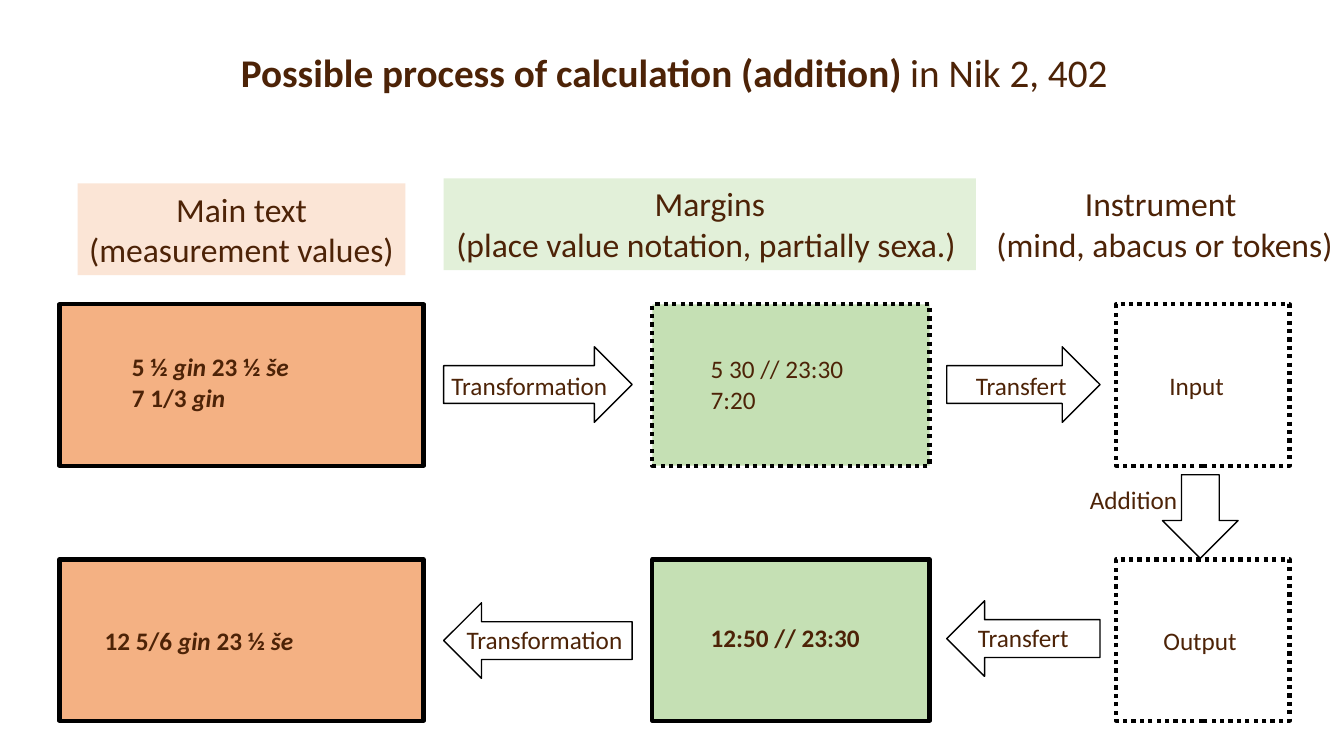
from dataclasses import dataclass

from pptx import Presentation
from pptx.dml.color import RGBColor
from pptx.enum.dml import MSO_LINE
from pptx.enum.shapes import MSO_SHAPE
from pptx.enum.text import MSO_AUTO_SIZE, PP_ALIGN
from pptx.util import Inches, Pt


@dataclass(frozen=True)
class Theme:
    """Colours, font and type sizes of the slide."""
    ink: str = "4D2307"
    edge: str = "000000"
    orange: str = "F4B183"
    peach: str = "FBE5D6"
    green: str = "C5E0B4"
    mint: str = "E2F0D9"
    font: str = "Calibri"
    title: int = 28
    head: int = 24
    body: int = 18


THEME = Theme()
B, I, BI = {"bold": True}, {"italic": True}, {"bold": True, "italic": True}


def apply(target, values):
    """Set each named value on the target."""
    for name, value in values.items():
        setattr(target, name, value)


def paint(shape, color):
    """Fill a shape with a colour, or leave it clear."""
    if color:
        shape.fill.solid()
        shape.fill.fore_color.rgb = RGBColor.from_string(color)
    else:
        shape.fill.background()


def draw(slide, kind, box, width, fill=None, dash=None, turn=0):
    """Draw an outlined preset shape."""
    shape = slide.shapes.add_shape(kind, *map(Inches, box))
    shape.shadow.inherit = False
    shape.rotation = turn
    paint(shape, fill)
    shape.line.color.rgb = RGBColor.from_string(THEME.edge)
    apply(shape.line, {"width": Pt(width), "dash_style": dash})


def write(slide, box, lines, size=THEME.body, align=PP_ALIGN.LEFT,
          fill=None, wrap=False):
    """Write lines of (text, style) runs in a text box."""
    shape = slide.shapes.add_textbox(*map(Inches, box))
    paint(shape, fill)
    frame = shape.text_frame
    apply(frame, {"word_wrap": wrap,
                  "auto_size": MSO_AUTO_SIZE.SHAPE_TO_FIT_TEXT})
    for n, line in enumerate(lines):
        para = frame.add_paragraph() if n else frame.paragraphs[0]
        para.alignment = align
        for text, style in line:
            run = para.add_run()
            run.text = text
            run.font.color.rgb = RGBColor.from_string(THEME.ink)
            apply(run.font, {"name": THEME.font, "size": Pt(size), **style})


def label(slide, left, top, width, text):
    """Write a plain one-line label that wraps."""
    write(slide, (left, top, width, 0.4), [[(text, {})]], wrap=True)


def header(slide, left, top, width, lines, fill=None):
    """Write a centred column heading."""
    write(slide, (left, top, width, 0.91), [[(text, {})] for text in lines],
          THEME.head, PP_ALIGN.CENTER, fill)


def stages(slide):
    """Draw the three stages in both rows."""
    dot = MSO_LINE.ROUND_DOT
    columns = ((0.59, 3.61, THEME.orange, None, None),
               (6.47, 2.75, THEME.green, dot, None),
               (11.07, 1.72, None, dot, dot))
    for left, width, fill, *dashes in columns:
        for top, dash in zip((3.02, 5.55), dashes):
            draw(slide, MSO_SHAPE.RECTANGLE, (left, top, width, 1.6), 3,
                 fill, dash)


def arrows(slide):
    """Draw the arrows that join the stages."""
    for left, top, width, turn in ((4.4, 3.44, 1.87, 0), (9.39, 3.44, 1.52, 0),
                                   (4.4, 5.98, 1.87, 180),
                                   (9.39, 5.96, 1.52, 180),
                                   (11.49, 4.75, 0.83, 90)):
        draw(slide, MSO_SHAPE.RIGHT_ARROW, (left, top, width, 0.75), 1,
             turn=turn)


def main():
    """Build the slide and save it."""
    deck = Presentation()
    apply(deck, {"slide_width": Inches(13.33), "slide_height": Inches(7.5)})
    slide = deck.slides.add_slide(deck.slide_layouts[6])
    stages(slide)
    arrows(slide)

    write(slide, (2.29, 0.43, 9.15, 0.57),
          [[("Possible process of calculation (addition) ", B),
            ("in Nik 2, 402", {})]], THEME.title)
    header(slide, 0.77, 1.82, 3.25,
           ("Main text", "(measurement values)"), THEME.peach)
    header(slide, 4.4, 1.77, 5.28,
           ("Margins", "(place value notation, partially sexa.) "), THEME.mint)
    header(slide, 9.77, 1.77, 3.56,
           ("Instrument ", "(mind, abacus or tokens)"))

    tail = [("gin ", BI), ("23 ½ ", B), ("še", BI)]
    write(slide, (1.21, 3.44, 1.77, 0.71),
          [[("5 ½ ", B), *tail], [("7 1/3 ", B), ("gin", BI)]])
    write(slide, (0.94, 6.15, 2.09, 0.4), [[("12 5/6 ", B), *tail]])
    write(slide, (6.95, 3.46, 1.8, 0.71),
          [[("5 30 // 23:30", {})], [("7:20", {})]], wrap=True)
    write(slide, (6.95, 6.12, 1.7, 0.4), [[("12:50 // 23:30", B)]])

    for spot in ((4.38, 3.62, 1.8, "Transformation"),
                 (4.53, 6.14, 1.8, "Transformation"),
                 (9.58, 3.62, 1.13, "Transfert"),
                 (9.6, 6.12, 1.13, "Transfert"),
                 (11.5, 3.62, 0.81, "Input"),
                 (11.44, 6.15, 0.97, "Output"),
                 (10.71, 4.76, 1.61, "Addition")):
        label(slide, *spot)
    deck.save("out.pptx")


if __name__ == "__main__":
    main()
